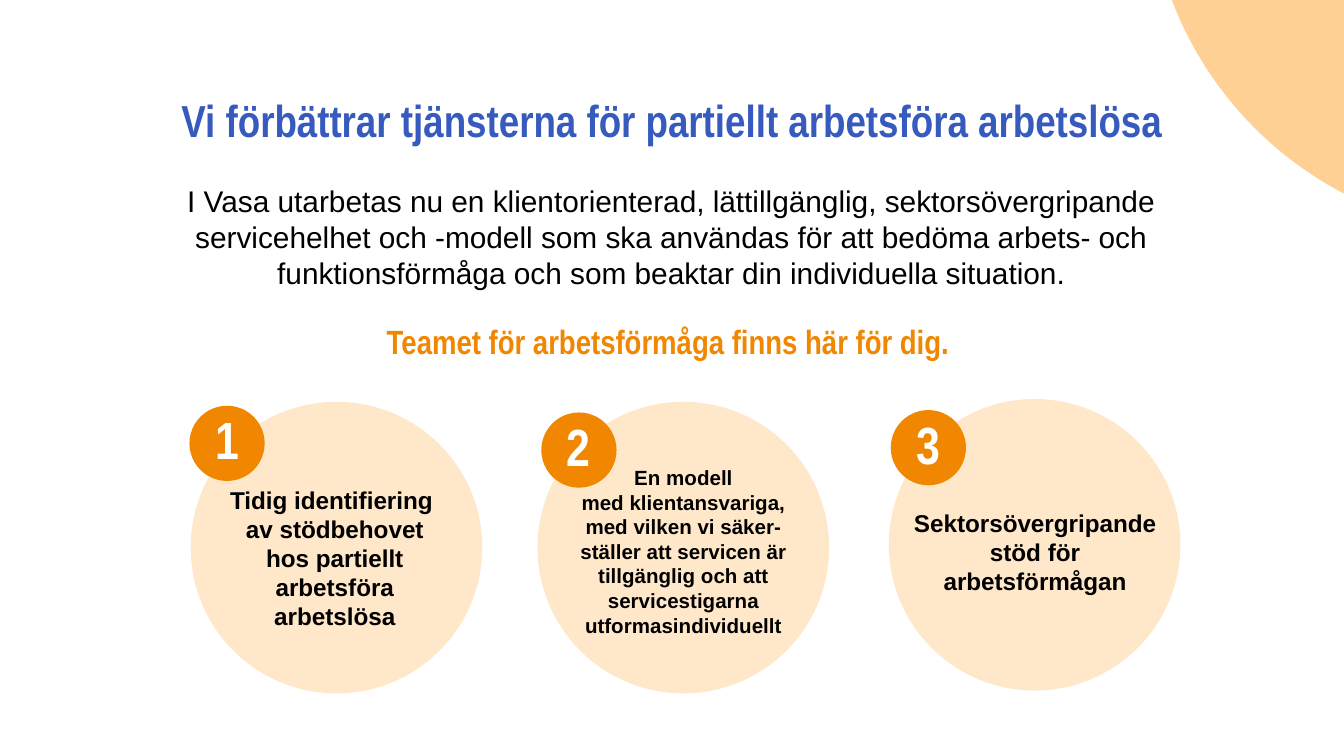
"""Build the slide on services for people with partial work ability."""
from dataclasses import dataclass
from math import acos, asin, cos, sin

from pptx import Presentation
from pptx.dml.color import RGBColor as RGB
from pptx.enum.shapes import MSO_SHAPE as Shape
from pptx.enum.text import MSO_ANCHOR as Anchor, MSO_AUTO_SIZE as AutoSize, PP_ALIGN as Align
from pptx.util import Pt


@dataclass(frozen=True)
class Theme:
    corner: RGB = RGB.from_string("FFD093")
    pale: RGB = RGB.from_string("FFE7C9")
    orange: RGB = RGB.from_string("F18700")
    blue: RGB = RGB.from_string("365ABD")
    white: RGB = RGB.from_string("FFFFFF")
    black: RGB = RGB.from_string("000000")
    body_font: str = "Arial"
    head_font: str = "Arial Narrow"
    title: float = 24
    body: float = 16
    slogan: float = 18
    number: float = 28
    label: float = 13
    small: float = 11


@dataclass(frozen=True)
class Box:
    x: float
    y: float
    w: float
    h: float

    def emu(self) -> tuple:
        return Pt(self.x), Pt(self.y), Pt(self.w), Pt(self.h)


@dataclass(frozen=True)
class Step:
    number: str
    circle: tuple[float, float]
    badge: tuple[float, float]
    label: Box
    text: list[str]
    size: float


THEME = Theme()
WIDTH, HEIGHT = 720, 405
CIRCLE, BADGE = 156.2, 40.3
NUMBER_W, NUMBER_H, NUMBER_RISE = 62.6, 44.6, 6.5
STEPS = [
    Step("1", (102.2, 215.3), (101.5, 217.4), Box(111.6, 256.3, 135.4, 85.7),
         ["Tidig identifiering ", "av stödbehovet hos partiellt arbetsföra arbetslösa"], THEME.label),
    Step("2", (288, 215.3), (290, 221), Box(294.5, 245.5, 143.3, 100.8),
         ["En modell\vmed klientansvariga, med vilken vi säker-ställer att servicen är "
          "tillgänglig och att servicestigarna utformasindividuellt"], THEME.small),
    Step("3", (476.2, 213.8), (477.2, 219.7), Box(481, 268.6, 146.9, 54.7),
         ["Sektorsövergripande stöd för arbetsförmågan"], THEME.label),
]


def paint(sp, color: RGB) -> None:
    sp.shadow.inherit = False
    sp.fill.solid()
    sp.fill.fore_color.rgb = color
    sp.line.fill.background()


def add_text(s, box: Box, *paragraphs: str, size: float, color: RGB = THEME.black,
             font: str = THEME.body_font, bold: bool = True, anchor: Anchor = Anchor.TOP,
             spacing: float = 1.0) -> None:
    tf = s.shapes.add_textbox(*box.emu()).text_frame
    tf.word_wrap = True
    tf.auto_size = AutoSize.NONE
    tf.vertical_anchor = anchor
    tf.text = "\n".join(paragraphs)
    for p in tf.paragraphs:
        p.alignment = Align.CENTER
        p.line_spacing = spacing
        for r in p.runs:
            r.font.name, r.font.size, r.font.bold = font, Pt(size), bold
            r.font.color.rgb = color


def add_disc(s, at: tuple[float, float], diameter: float, color: RGB) -> None:
    paint(s.shapes.add_shape(Shape.OVAL, *Box(*at, diameter, diameter).emu()), color)


def add_corner(s, cx: float = 810.7, cy: float = -69.8, radius: float = 195.8, steps: int = 24) -> None:
    start, end = asin(-cy / radius), acos((cx - WIDTH) / radius)
    angles = [start + (end - start) * i / steps for i in range(steps + 1)]
    arc = [(Pt(cx - radius * cos(a)), Pt(cy + radius * sin(a))) for a in angles]
    builder = s.shapes.build_freeform(Pt(WIDTH), 0)
    builder.add_line_segments(arc, close=True)
    paint(builder.convert_to_shape(), THEME.corner)


def add_step(s, step: Step) -> None:
    add_disc(s, step.circle, CIRCLE, THEME.pale)
    add_disc(s, step.badge, BADGE, THEME.orange)
    x, y = step.badge
    add_text(s, Box(x + (BADGE - NUMBER_W) / 2, y - NUMBER_RISE, NUMBER_W, NUMBER_H), step.number,
             size=THEME.number, color=THEME.white, font=THEME.head_font, anchor=Anchor.BOTTOM)
    add_text(s, step.label, *step.text, size=step.size)


def main() -> None:
    prs = Presentation()
    prs.slide_width, prs.slide_height = Pt(WIDTH), Pt(HEIGHT)
    s = prs.slides.add_slide(prs.slide_layouts[6])
    add_corner(s)
    add_text(s, Box(55.4, 20.9, 609.2, 61.9), "Vi förbättrar tjänsterna för partiellt arbetsföra arbetslösa",
             size=THEME.title, color=THEME.blue, font=THEME.head_font, anchor=Anchor.BOTTOM, spacing=0.95)
    add_text(s, Box(90, 94.3, 539.3, 75.6),
             "I Vasa utarbetas nu en klientorienterad, lättillgänglig, sektorsövergripande servicehelhet "
             "och -modell som ska användas för att bedöma arbets- och funktionsförmåga och som beaktar "
             "din individuella situation.", size=THEME.body, bold=False)
    add_text(s, Box(180, 168.5, 360, 28.8), "Teamet för arbetsförmåga finns här för dig. ",
             size=THEME.slogan, color=THEME.orange, font=THEME.head_font)
    for step in STEPS:
        add_step(s, step)
    prs.save("out.pptx")


if __name__ == "__main__":
    main()
